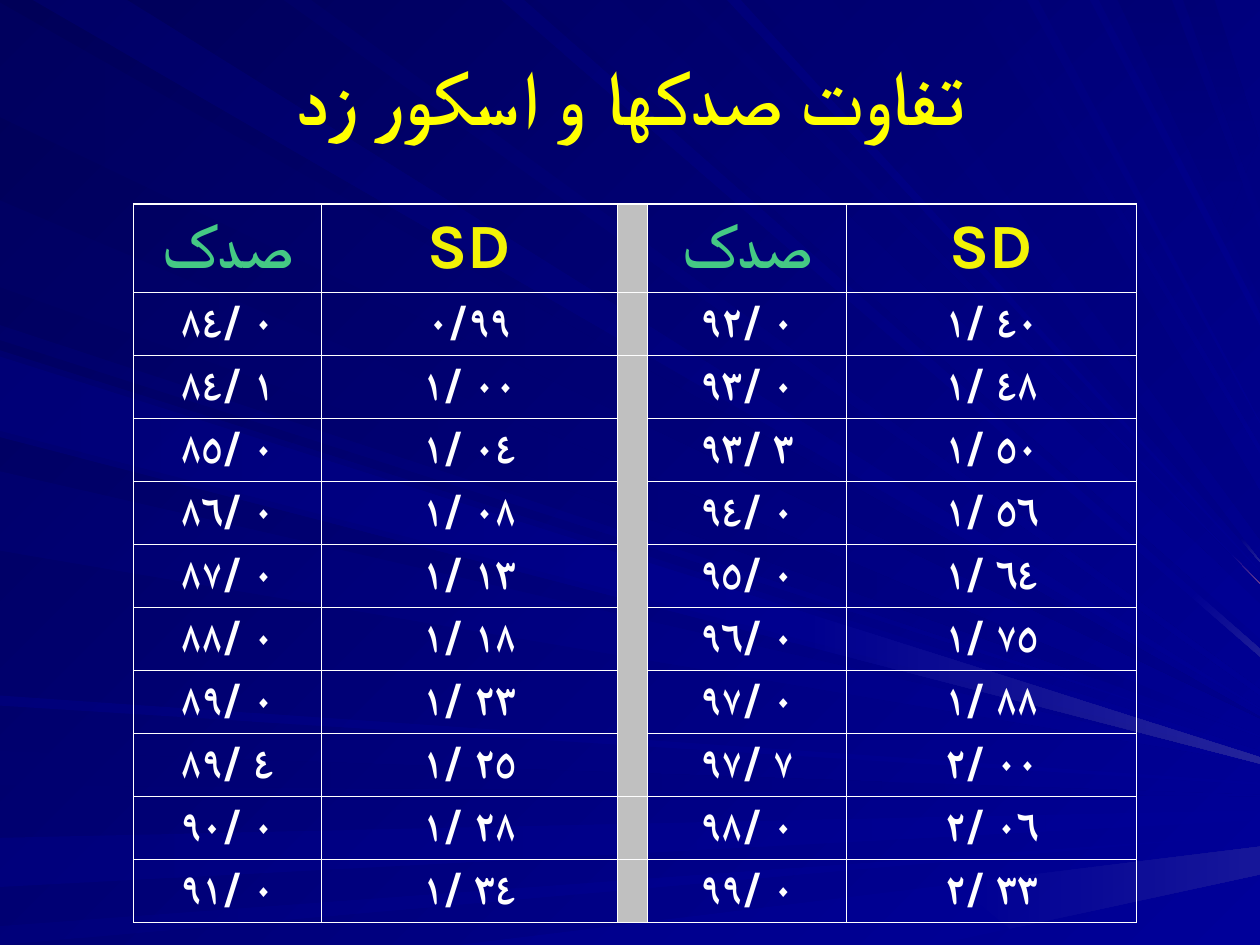
from itertools import pairwise
from lxml.etree import SubElement
from pptx import Presentation
from pptx.dml.color import RGBColor
from pptx.enum.text import MSO_ANCHOR, PP_ALIGN
from pptx.oxml.ns import qn
from pptx.util import Inches, Pt

WIDE, HIGH = 10, 7.5
FONT = "Karla"
WHITE, GREY, GREEN, YELLOW = "FFFFFF", "C0C0C0", "45C984", "F2F206"
TITLE = "تفاوت صدکها و اسکور زد"
HEADS = ("صدک", "SD", "", "صدک", "SD")
ROWS = [
    ("٠ /٨٤", "٠/٩٩", "", "٠ /٩٢", "٤٠ /١"),
    ("١ /٨٤", "٠٠ /١", "", "٠ /٩٣", "٤٨ /١"),
    ("٠ /٨٥", "٠٤ /١", "", "٣ /٩٣", "٥٠ /١"),
    ("٠ /٨٦", "٠٨ /١", "", "٠ /٩٤", "٥٦ /١"),
    ("٠ /٨٧", "١٣ /١", "", "٠ /٩٥", "٦٤ /١"),
    ("٠ /٨٨", "١٨ /١", "", "٠ /٩٦", "٧٥ /١"),
    ("٠ /٨٩", "٢٣ /١", "", "٠ /٩٧", "٨٨ /١"),
    ("٤ /٨٩", "٢٥ /١", "", "٧ /٩٧", "٠٠ /٢"),
    ("٠ /٩٠", "٢٨ /١", "", "٠ /٩٨", "٠٦ /٢"),
    ("٠ /٩١", "٣٤ /١", "", "٠ /٩٩", "٣٣ /٢"),
]
WIDTHS = [1.49, 2.35, 0.23, 1.58, 2.3]
HEIGHTS = [0.7] + [0.5] * len(ROWS)
TINTS = (GREEN, YELLOW, GREY, GREEN, YELLOW)
GAP = 2

SIDES = {
    "left": lambda pos: (0, pos),
    "top": lambda pos: (pos, 0),
    "bottom": lambda pos: (pos, HIGH),
    "right": lambda pos: (WIDE, pos),
}
ALPHA = 40
GLOW = "5A5AA6"

# Each ray: side it leaves, its two edges there, the same edges at the right side,
# gradient angle, shades along it, and how far along each edge a shade change falls.
RAYS = [
    ("left", (0.93, 0.02), (5.7, 5.69), 0, ("69", "80"), ()),
    ("top", (0.26, 1.01), (5.63, 5.62), 45, ("7B", "99"), ()),
    ("left", (6.23, 5.96), (6.32, 6.31), 0, ("71", "80", "99"), (0.7, 0.7)),
    ("left", (7.04, 6.65), (6.51, 6.43), 0, ("8C", "99", "99"), (0.83, 0.83)),
    ("left", (7.5, 7.35), (6.62, 6.62), 0, ("85", "99", "99"), (0.63, 0.63)),
    ("bottom", (7.42, 3.64), (6.94, 6.72), 0, ("99", "99", "39399E"), (0.23, 0.62)),
    ("left", (2.7, 2.58), (5.89, 5.89), 45, ("76", "99", "99"), (0.87, 0.87)),
    ("left", (2.28, 1.59), (5.85, 5.84), 0, ("6B", "80", "99"), (0.87, 0.87)),
    ("top", (3.98, 4.16), (5.21, 5.15), 45, ("83", "99", "4A4AA1"), (0.91, 0.91)),
    ("top", (4.26, 4.92), (5.07, 4.79), 45, ("6D", "99", "99"), (0.91, 0.94)),
    ("top", (5.4, 5.52), (4.63, 4.63), 45, ("73", "99", "FF9999"), (0.95, 0.95)),
    ("top", (6.06, 6.61), (4.46, 4.45), 90, ("73", "80", GLOW), (0.96, 0.96)),
    ("top", (8.87, 9.3), (2.37, 1.83), 90, ("6B", "80", "80"), (0.76, 0.8)),
    ("top", (9.39, 9.64), (1.67, 1.14), 90, ("6D", "80", "80"), (0.82, 0.97)),
    ("left", (3.42, 2.78), (6.02, 5.96), 45, ("7E", "99"), ()),
    ("left", (4.37, 3.74), (6.06, 6.05), 45, ("7B", "99"), ()),
    ("left", (5.6, 5.52), (6.23, 6.21), 0, ("8E", "99"), ()),
    ("top", (2.25, 2.47), (5.52, 5.47), 45, ("70", "99"), ()),
    ("top", (5.77, 5.88), (4.54, 4.53), 45, ("8E", "99"), ()),
    ("top", (6.86, 7.7), (4.28, 3.9), 90, ("73", "80"), ()),
    ("top", (7.85, 7.92), (3.6, 3.54), 45, ("78", "99"), ()),
    ("top", (8.15, 8.24), (3.36, 3.35), 45, ("85", "99"), ()),
    ("top", (8.65, 8.72), (2.58, 2.49), 45, ("8A", "99"), ()),
    ("left", (3.47, 2.83), (6.06, 6.01), 0, ("85", "99", GLOW), (0.63, 0.64)),
]


def rgb(hue):
    return RGBColor.from_string(hue.rjust(6, "0"))


def paint(fill, first, last, angle=0):
    if first == last:
        fill.solid()
        fill.fore_color.rgb = rgb(first)
        return
    fill.gradient()
    fill.gradient_angle = (360 - angle) % 360
    for stop, hue in zip(fill.gradient_stops, (first, last)):
        stop.color.rgb = rgb(hue)


def along(start, end, part):
    return tuple(a + (b - a) * part for a, b in zip(start, end))


def add_piece(slide, near, far, shades, angle):
    start, *rest = [*near, *reversed(far)]
    maker = slide.shapes.build_freeform(*map(Inches, start), scale=1.0)
    maker.add_line_segments([tuple(map(Inches, point)) for point in rest])
    piece = maker.convert_to_shape()
    piece.shadow.inherit = False
    piece.line.fill.background()
    paint(piece.fill, *shades, angle)
    for tone in piece._element.spPr.iter(qn("a:srgbClr")):
        SubElement(tone, qn("a:alpha"), val=str(ALPHA * 1000))


def add_ray(slide, side, near, far, angle, shades, cut):
    starts = [SIDES[side](pos) for pos in near]
    ends = [SIDES["right"](pos) for pos in far]
    joints = [list(map(along, starts, ends, cut))] if cut else []
    spans = pairwise([starts, *joints, ends])
    for (head, tail), pair in zip(spans, pairwise(shades)):
        add_piece(slide, head, tail, pair, angle)


def write(para, text, size, hue):
    para.text = text
    para.alignment = PP_ALIGN.CENTER
    font = para.font
    font.name, font.size, font.bold = FONT, Pt(size), True
    font.color.rgb = rgb(hue)
    base = para._p.pPr.find(qn("a:defRPr"))
    SubElement(base, qn("a:cs"), typeface=FONT)


def edge(cell):
    props = cell._tc.get_or_add_tcPr()
    for side in ("lnL", "lnR", "lnT", "lnB"):
        line = SubElement(props, qn("a:" + side), w=str(Pt(1)))
        fill = SubElement(line, qn("a:solidFill"))
        SubElement(fill, qn("a:srgbClr"), val=WHITE)


def add_grid(slide):
    frame = slide.shapes.add_table(
        len(HEIGHTS), len(WIDTHS), Inches(1.06), Inches(1.62),
        Inches(sum(WIDTHS)), Inches(sum(HEIGHTS)))
    grid = frame.table
    grid.first_row = grid.horz_banding = False
    for col, width in zip(grid.columns, WIDTHS):
        col.width = Inches(width)
    for row, height in zip(grid.rows, HEIGHTS):
        row.height = Inches(height)
    for r, row in enumerate([HEADS, *ROWS]):
        for c, text in enumerate(row):
            cell = grid.cell(r, c)
            edge(cell)
            if c == GAP:
                paint(cell.fill, GREY, GREY)
                continue
            cell.fill.background()
            para = cell.text_frame.paragraphs[0]
            size, hue = (24, WHITE) if r else (36, TINTS[c])
            write(para, text, size, hue)
            para._p.get_or_add_pPr().set("rtl", "1")
    grid.cell(2, GAP).merge(grid.cell(8, GAP))


def add_title(slide):
    box = slide.shapes.add_textbox(Inches(0.51), Inches(0.28), Inches(9), Inches(0.95))
    frame = box.text_frame
    frame.word_wrap = True
    frame.vertical_anchor = MSO_ANCHOR.MIDDLE
    write(frame.paragraphs[0], TITLE, 44, "FFFF00")


def main():
    deck = Presentation()
    deck.slide_width, deck.slide_height = Inches(WIDE), Inches(HIGH)
    slide = deck.slides.add_slide(deck.slide_layouts[6])
    paint(slide.background.fill, "58", "99", 45)
    for ray in RAYS:
        add_ray(slide, *ray)
    add_grid(slide)
    add_title(slide)
    deck.save("out.pptx")


if __name__ == "__main__":
    main()
